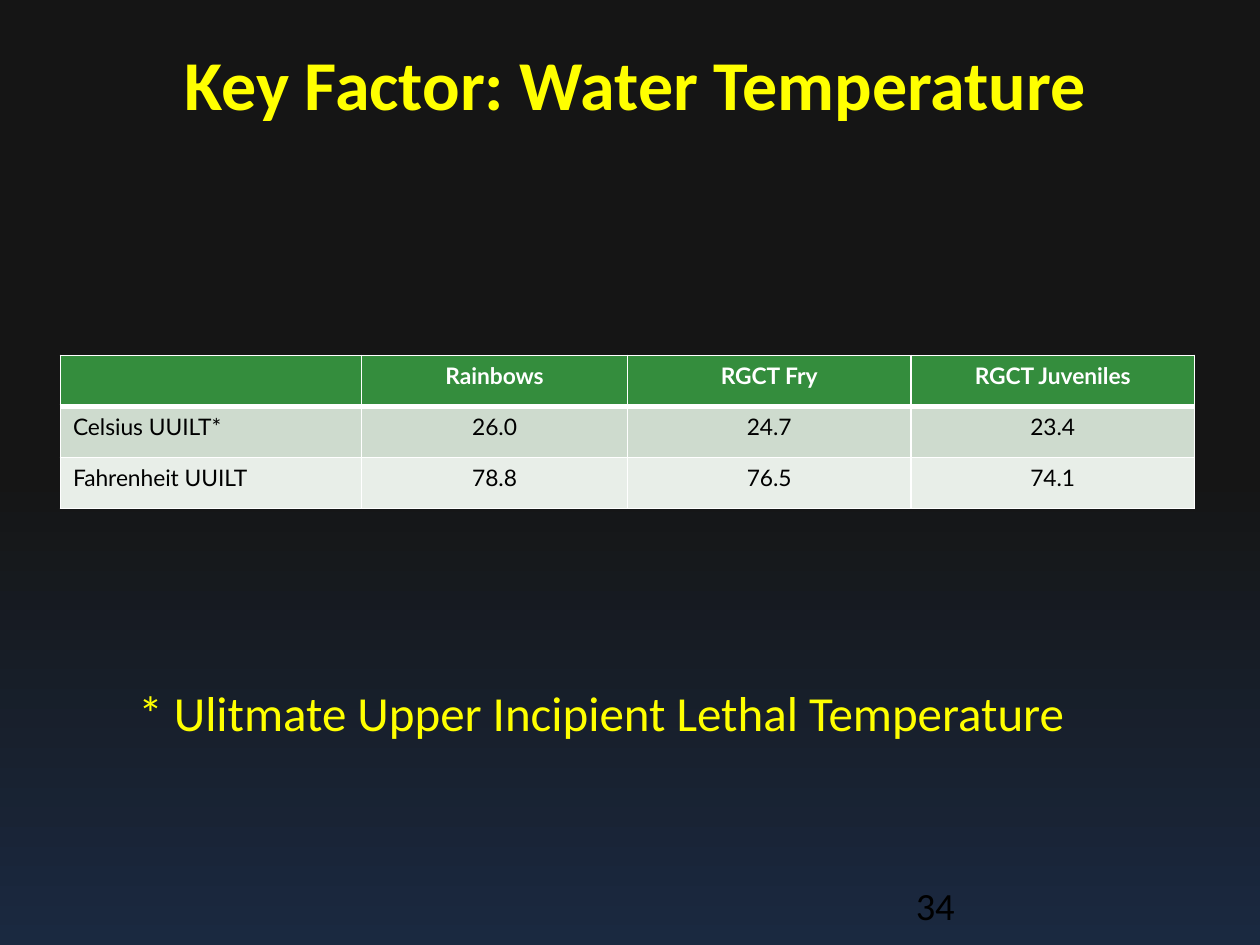
from lxml import etree
from pptx import Presentation
from pptx.dml.color import RGBColor
from pptx.enum.shapes import MSO_SHAPE
from pptx.enum.text import MSO_ANCHOR, PP_ALIGN
from pptx.oxml.ns import qn
from pptx.util import Inches, Pt

RECTANGLE = MSO_SHAPE.RECTANGLE
MIDDLE = MSO_ANCHOR.MIDDLE
LEFT, CENTER = PP_ALIGN.LEFT, PP_ALIGN.CENTER

THEME = {
    "backdrop": ("181818", "1D2E48"),
    "shade": "000000",
    "border": "FFFFFF",
    "row_fills": ("348D3D", "CEDBCE", "E8EEE8"),
    "title": {"name": "Calibri", "size": 40, "bold": True, "color": "FFFF00"},
    "header": {"name": "Lato", "size": 13, "bold": True, "color": "FFFFFF"},
    "body": {"name": "Lato", "size": 13, "bold": False, "color": "000000"},
    "footnote": {"name": "Calibri", "size": 28, "bold": False, "color": "FFFF00"},
    "number": {"name": "Calibri", "size": 22, "bold": False, "color": "000000"},
}


def write(frame, text, style, align=LEFT):
    paragraph = frame.paragraphs[0]
    paragraph.text = text
    paragraph.alignment = align
    font = paragraph.runs[0].font
    for attribute, value in THEME[style].items():
        if attribute == "color":
            font.color.rgb = RGBColor.from_string(value)
        else:
            setattr(font, attribute, Pt(value) if attribute == "size" else value)


def add_border(cell, side, points):
    properties = cell._tc.get_or_add_tcPr()
    line = etree.SubElement(properties, qn(f"a:ln{side}"), w=str(Pt(points)))
    fill = etree.SubElement(line, qn("a:solidFill"))
    etree.SubElement(fill, qn("a:srgbClr"), val=THEME["border"])


prs = Presentation()
prs.slide_width, prs.slide_height = Inches(10), Inches(7.5)
slide = prs.slides.add_slide(prs.slide_layouts[5])

backdrop = slide.background.fill
backdrop.gradient()
backdrop.gradient_angle = 270
for stop, position, color in zip(backdrop.gradient_stops, (0.5, 1), THEME["backdrop"]):
    stop.position = position
    stop.color.rgb = RGBColor.from_string(color)

shade = slide.shapes.add_shape(RECTANGLE, 0, 0, prs.slide_width, prs.slide_height)
shade.shadow.inherit = False
shade.line.fill.background()
shade.fill.solid()
shade.fill.fore_color.rgb = RGBColor.from_string(THEME["shade"])
shade_color = shade._element.spPr.find(qn("a:solidFill")).find(qn("a:srgbClr"))
etree.SubElement(shade_color, qn("a:alpha"), val="10000")
slide.shapes._spTree.insert(2, shade._element)

title = slide.shapes.title
title.left, title.top = Inches(0.32), Inches(0)
title.width, title.height = Inches(9.44), Inches(1.31)
title.text_frame.vertical_anchor = MIDDLE
write(title.text_frame, "Key Factor: Water Temperature", "title", CENTER)

limits = [
    ("", "Rainbows", "RGCT Fry", "RGCT Juveniles"),
    ("Celsius UUILT*", "26.0", "24.7", "23.4"),
    ("Fahrenheit UUILT", "78.8", "76.5", "74.1"),
]
column_widths = (2.39, 2.11, 2.25, 2.25)
row_height = 0.405
limits_table = slide.shapes.add_table(
    len(limits), len(column_widths), Inches(0.48), Inches(2.82),
    Inches(sum(column_widths)), Inches(row_height * len(limits)),
).table
for column, width in zip(limits_table.columns, column_widths):
    column.width = Inches(width)
for row_index, (values, row_fill) in enumerate(zip(limits, THEME["row_fills"])):
    limits_table.rows[row_index].height = Inches(row_height)
    top_width = 3 if row_index == 1 else 1
    bottom_width = 3 if row_index == 0 else 1
    for column_index, value in enumerate(values):
        cell = limits_table.cell(row_index, column_index)
        for side, points in zip("LRTB", (1, 1, top_width, bottom_width)):
            add_border(cell, side, points)
        cell.fill.solid()
        cell.fill.fore_color.rgb = RGBColor.from_string(row_fill)
        if value:
            style = "header" if row_index == 0 else "body"
            write(cell.text_frame, value, style, CENTER if column_index else LEFT)

notes = [
    ("34", "number", (7.17, 6.95, 2.33, 0.4)),
    ("* Ulitmate Upper Incipient Lethal Temperature", "footnote", (1, 5.37, 7.91, 0.57)),
]
for text, style, box in notes:
    frame = slide.shapes.add_textbox(*map(Inches, box)).text_frame
    frame.word_wrap = True
    write(frame, text, style)

prs.save("out.pptx")
